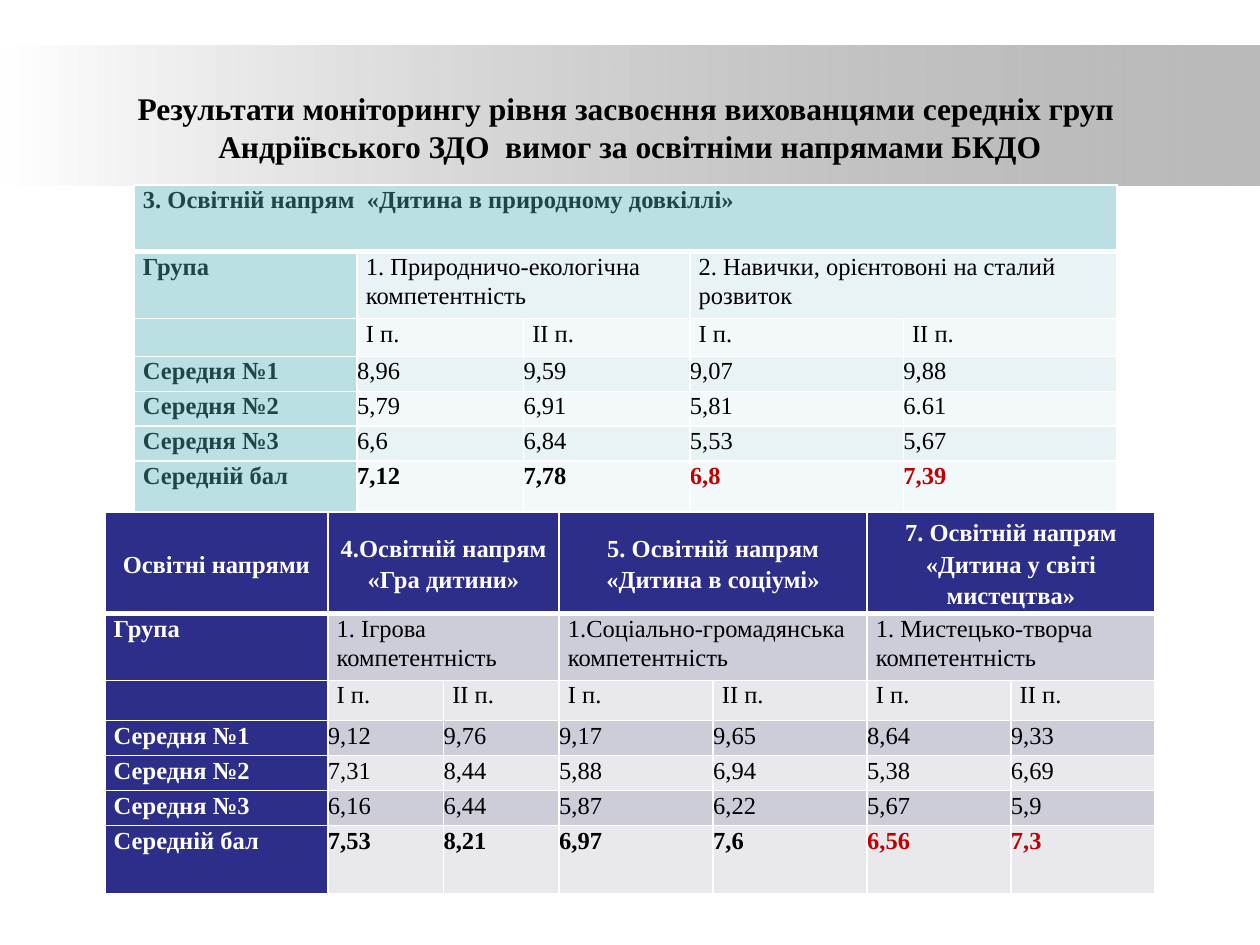
import pptx
import pptx.util
import pptx.dml.color
import pptx.enum.shapes
import pptx.enum.text
import pptx.oxml
import pptx.oxml.ns

Pt = pptx.util.Pt
RGBColor = pptx.dml.color.RGBColor
ALIGN = pptx.enum.text.PP_ALIGN
ANCHOR = pptx.enum.text.MSO_ANCHOR

WHITE = RGBColor(0xFF, 0xFF, 0xFF)
BLACK = RGBColor(0, 0, 0)
GREY = RGBColor(0x80, 0x80, 0x80)
RED = RGBColor(0xC0, 0, 0)
TEAL = RGBColor(0x1E, 0x46, 0x49)
AQUA = RGBColor(0xBB, 0xE0, 0xE3)
AQUA_BANDS = (RGBColor(0xE7, 0xF3, 0xF4), RGBColor(0xF3, 0xF9, 0xFA))
NAVY = RGBColor(0x2D, 0x2D, 0x8A)
NAVY_BANDS = (RGBColor(0xCD, 0xCD, 0xDA), RGBColor(0xE8, 0xE8, 0xED))

GROUPS = ["Середня №1", "Середня №2", "Середня №3", "Середній бал"]
TERMS = ["І п.", "ІІ п."]


def write(frame, text, size=14, color=BLACK, bold=False, align=ALIGN.LEFT,
          line=None, after=0):
    para = frame.paragraphs[0]
    para.text = text
    para.alignment = align
    para.line_spacing = line
    para.space_after = Pt(after)
    for run in para.runs:
        run.font.name = "Times New Roman"
        run.font.size = Pt(size)
        run.font.bold = bold
        run.font.color.rgb = color


def band(slide, left, top, width, height):
    rect = slide.shapes.add_shape(
        pptx.enum.shapes.MSO_SHAPE.RECTANGLE,
        Pt(left), Pt(top), Pt(width), Pt(height))
    rect.shadow.inherit = False
    rect.line.fill.background()
    rect.fill.gradient()
    rect.fill.gradient_angle = 0
    for stop, color in zip(rect.fill.gradient_stops, (WHITE, GREY)):
        stop.color.rgb = color
    tint = rect._element.xpath(".//a:gs//a:srgbClr")[-1]
    alpha = pptx.oxml.parse_xml(
        f'<a:alpha {pptx.oxml.ns.nsdecls("a")} val="54000"/>')
    tint.append(alpha)


def title(slide, left, top, width, height):
    frame = slide.shapes.add_textbox(
        Pt(left), Pt(top), Pt(width), Pt(height)).text_frame
    frame.word_wrap = True
    frame.vertical_anchor = ANCHOR.MIDDLE
    write(frame, "Результати моніторингу рівня засвоєння вихованцями середніх груп \n"
          "Андріївського ЗДО  вимог за освітніми напрямами БКДО",
          size=18, bold=True, align=ALIGN.CENTER)


def border(cell, row):
    props = cell._tc.get_or_add_tcPr()
    for side in "LRTB":
        wide = (row, side) in ((0, "B"), (1, "T"))
        props.append(pptx.oxml.parse_xml(
            f'<a:ln{side} {pptx.oxml.ns.nsdecls("a")} w="{Pt(3 if wide else 1)}">'
            f'<a:solidFill><a:srgbClr val="{WHITE}"/></a:solidFill></a:ln{side}>'))


def grid(slide, left, top, cols, rows, data, spans, base, bands, ink, reds, head):
    table = slide.shapes.add_table(
        len(rows), len(cols), Pt(left), Pt(top),
        Pt(sum(cols)), Pt(sum(rows))).table
    table.horz_banding = False
    for col, width in zip(table.columns, cols):
        col.width = Pt(width)
    for row, height in zip(table.rows, rows):
        row.height = Pt(height)
    for row, first, last in spans:
        table.cell(row, first).merge(table.cell(row, last))
    for r, line in enumerate(data):
        for c, text in enumerate(line):
            cell = table.cell(r, c)
            border(cell, r)
            label = r == 0 or c == 0
            cell.fill.solid()
            cell.fill.fore_color.rgb = base if label else bands[(r - 1) % 2]
            value = r > 2 and c > 0
            cell.margin_left = cell.margin_right = Pt(0 if value else 5)
            cell.margin_top = cell.margin_bottom = 0
            if not text:
                continue
            form = dict(color=ink if label else BLACK, bold=label or r == 6,
                        line=1.07, after=0 if value else 8)
            if r == 6 and c in reds:
                form["color"] = RED
            if r == 0:
                form.update(head)
                if head:
                    cell.vertical_anchor = ANCHOR.MIDDLE
            write(cell.text_frame, text, **form)


def nature(slide, left, top):
    values = ["8,96 9,59 9,07 9,88", "5,79 6,91 5,81 6.61",
              "6,6 6,84 5,53 5,67", "7,12 7,78 6,8 7,39"]
    data = [
        ["3. Освітній напрям  «Дитина в природному довкіллі»"] + [""] * 4,
        ["Група", "1. Природничо-екологічна  компетентність", "",
         "2. Навички, орієнтовоні на сталий розвиток", ""],
        [""] + TERMS * 2,
    ] + [[name] + line.split() for name, line in zip(GROUPS, values)]
    grid(slide, left, top, [127.4] + [95.1] * 2 + [122] * 2,
         [38.2, 38.2, 21.6] + [20] * 3 + [38.9], data,
         [(0, 0, 4), (1, 1, 2), (1, 3, 4)],
         AQUA, AQUA_BANDS, TEAL, (3, 4), {})


def social(slide, left, top):
    values = ["9,12 9,76 9,17 9,65 8,64 9,33", "7,31 8,44 5,88 6,94 5,38 6,69",
              "6,16 6,44 5,87 6,22 5,67 5,9", "7,53 8,21 6,97 7,6 6,56 7,3"]
    data = [
        ["Освітні напрями", "4.Освітній напрям «Гра дитини»", "",
         "5. Освітній напрям «Дитина в соціумі»", "",
         "7. Освітній напрям «Дитина у світі мистецтва»", ""],
        ["Група", "1. Ігрова  компетентність", "",
         "1.Соціально-громадянська компетентність", "",
         "1. Мистецько-творча компетентність", ""],
        [""] + TERMS * 3,
    ] + [[name] + line.split() for name, line in zip(GROUPS, values)]
    grid(slide, left, top, [127.4] + [66.1] * 2 + [88] * 2 + [82.2] * 2,
         [57.6, 38.2, 23] + [20] * 3 + [38.9], data,
         [(r, c, c + 1) for r in (0, 1) for c in (1, 3, 5)],
         NAVY, NAVY_BANDS, WHITE, (5, 6), dict(align=ALIGN.CENTER, line=1.15))


def main():
    deck = pptx.Presentation()
    deck.slide_width, deck.slide_height = Pt(720), Pt(540)
    slide = deck.slides.add_slide(deck.slide_layouts[6])
    band(slide, 0, 25.8, 720, 80)
    title(slide, 42.5, 39, 635, 67)
    nature(slide, 76.7, 105.6)
    social(slide, 60, 292.6)
    deck.save("out.pptx")


if __name__ == "__main__":
    main()
